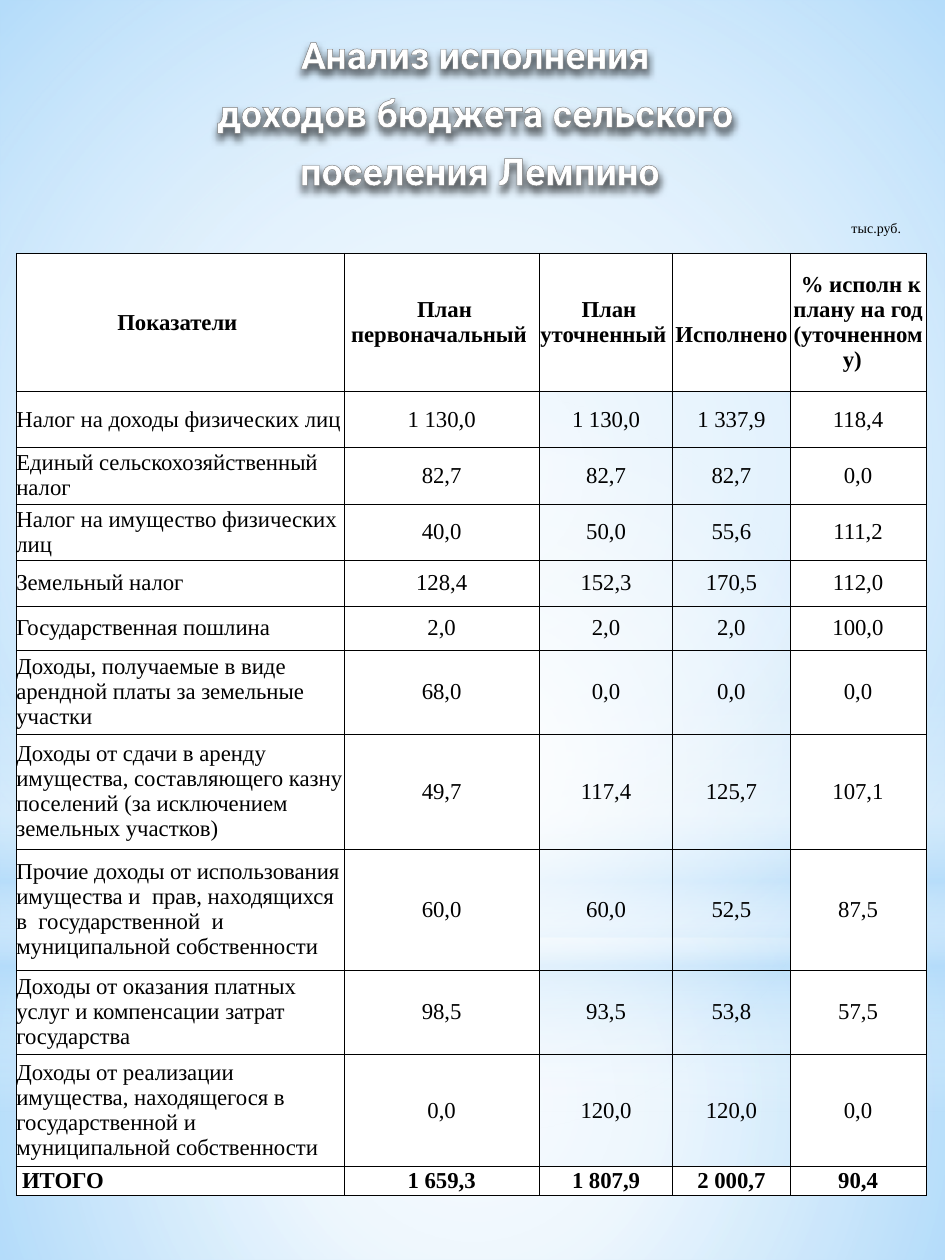
from lxml import etree
from pptx import Presentation
from pptx.dml.color import RGBColor
from pptx.enum.shapes import MSO_SHAPE as Shape
from pptx.enum.text import MSO_ANCHOR as Anchor, PP_ALIGN as Align
from pptx.oxml import parse_xml
from pptx.oxml.ns import nsdecls, qn
from pptx.util import Inches, Pt

COLORS = {"sky": "B4DCFA", "white": "FFFFFF", "black": "000000",
          "gray": "7F7F7F", "outline": "7D7D7D"}

BACKDROP = [
    (Shape.RECTANGLE, (0, 7.44, 7.5, 2.56), True,
     [(0, "white", 91), (37, "white", 76), (100, "sky", 79)]),
    (Shape.RECTANGLE, (0, 0, 7.5, 7.44), True,
     [(0, "white", 89), (48, "white", 62), (100, "sky", 79)]),
    (Shape.RECTANGLE, (0, 5.49, 7.5, 3.33), False,
     [(0, "white", 0), (29, "white", 30), (45, "sky", 40),
      (55, "white", 26), (65, "sky", 60), (100, "white", 0)]),
    (Shape.OVAL, (0, 2.33, 7.5, 7.44), True,
     [(0, "white", 100), (56, "white", 0)]),
]

TITLE = ["Анализ исполнения ", "доходов бюджета сельского ", "поселения Лемпино"]
TITLE_STOPS = [(0, "white", 100), (9, "white", 100), (50, "gray", 100),
               (79, "white", 100), (100, "white", 100)]
UNIT = "тыс.руб."

COLUMN_WIDTHS = [2.6, 1.55, 1.06, 0.93, 1.08]
ROW_HEIGHTS = [1.1, 0.44, 0.45, 0.45, 0.36, 0.35, 0.67, 0.91, 0.96, 0.67, 0.89, 0.23]
ROWS = [
    ("Показатели ", " План первоначальный ", " План уточненный ", " Исполнено ",
     " % исполн к плану на год (уточненному)  "),
    ("Налог на доходы физических лиц", "1 130,0", "1 130,0", "1 337,9", "118,4"),
    ("Единый сельскохозяйственный налог", "82,7", "82,7", "82,7", "0,0"),
    ("Налог на имущество физических лиц", "40,0", "50,0", "55,6", "111,2"),
    ("Земельный налог", "128,4", "152,3", "170,5", "112,0"),
    ("Государственная пошлина", "2,0", "2,0", "2,0", "100,0"),
    ("Доходы, получаемые в виде арендной платы за земельные участки",
     "68,0", "0,0", "0,0", "0,0"),
    ("Доходы от сдачи в аренду имущества, составляющего казну поселений "
     "(за исключением земельных участков)", "49,7", "117,4", "125,7", "107,1"),
    ("Прочие доходы от использования имущества и  прав, находящихся  "
     "в  государственной  и  муниципальной собственности",
     "60,0", "60,0", "52,5", "87,5"),
    ("Доходы от оказания платных услуг и компенсации затрат государства",
     "98,5", "93,5", "53,8", "57,5"),
    ("Доходы от реализации имущества, находящегося в государственной и "
     "муниципальной собственности", "0,0", "120,0", "120,0", "0,0"),
    (" ИТОГО", "1 659,3", "1 807,9", "2 000,7", "90,4"),
]
CLEAR_COLUMNS = (2, 3)


def rgb(name):
    return RGBColor.from_string(COLORS[name])


def gradient(stops, radial):
    stop_xml = "".join(
        f'<a:gs pos="{position * 1000}"><a:srgbClr val="{COLORS[color]}">'
        f'<a:alpha val="{opacity * 1000}"/></a:srgbClr></a:gs>'
        for position, color, opacity in stops)
    direction = ('<a:path path="circle"><a:fillToRect l="50000" t="50000" '
                 'r="50000" b="50000"/></a:path>' if radial
                 else '<a:lin ang="5400000" scaled="0"/>')
    return parse_xml(f'<a:gradFill {nsdecls("a")} rotWithShape="1">'
                     f'<a:gsLst>{stop_xml}</a:gsLst>{direction}</a:gradFill>')


def line(tag, color, points):
    return parse_xml(f'<a:{tag} {nsdecls("a")} w="{int(Pt(points))}"><a:solidFill>'
                     f'<a:srgbClr val="{COLORS[color]}"/></a:solidFill></a:{tag}>')


def add_backdrop(slide):
    slide.background.fill.solid()
    slide.background.fill.fore_color.rgb = rgb("sky")
    for kind, box, radial, stops in BACKDROP:
        shape = slide.shapes.add_shape(kind, *map(Inches, box))
        shape.shadow.inherit = False
        shape.line.fill.background()
        properties = shape._element.spPr
        properties.find(qn("a:prstGeom")).addnext(gradient(stops, radial))


def style_run(run, size, font, bold, color="black"):
    run.font.size = Pt(size)
    run.font.name = font
    run.font.bold = bold
    run.font.color.rgb = rgb(color)


def add_title(slide):
    box = slide.shapes.add_textbox(*map(Inches, (0.36, 0.2, 6.85, 1.42)))
    frame = box.text_frame
    frame.word_wrap = True
    frame.text = "\n".join(TITLE)
    for paragraph in frame.paragraphs:
        paragraph.alignment = Align.CENTER
        paragraph.space_before = Pt(4.3)
        paragraph.space_after = Pt(3)
        paragraph._p.get_or_add_pPr().set("marL", str(Inches(0.05)))
        run = paragraph.runs[0]
        style_run(run, 21.6, "Roboto", True, "white")
        properties = run._r.get_or_add_rPr()
        solid = properties.find(qn("a:solidFill"))
        properties.replace(solid, gradient(TITLE_STOPS, False))
        properties.insert(0, line("ln", "outline", 0.83))
    effects = etree.SubElement(box._element.spPr, qn("a:effectLst"))
    effects.append(parse_xml(
        f'<a:outerShdw {nsdecls("a")} blurRad="50800" dist="38100" dir="5400000">'
        f'<a:srgbClr val="{COLORS["black"]}"><a:alpha val="60000"/></a:srgbClr>'
        '</a:outerShdw>'))


def add_unit(slide):
    box = slide.shapes.add_textbox(*map(Inches, (6.66, 1.69, 0.76, 0.24)))
    box.text_frame.word_wrap = True
    box.text_frame.text = UNIT
    style_run(box.text_frame.paragraphs[0].runs[0], 8, "Times New Roman", False)


def fill_cell(cell, text, row, column):
    emphasized = row in (0, len(ROWS) - 1)
    cell.text_frame.text = text
    cell.vertical_anchor = Anchor.MIDDLE
    cell.margin_left = cell.margin_right = cell.margin_top = cell.margin_bottom = 0
    paragraph = cell.text_frame.paragraphs[0]
    paragraph.alignment = Align.CENTER if column or row == 0 else Align.LEFT
    style_run(paragraph.runs[0], 13, "Times New Roman", emphasized)
    if column in CLEAR_COLUMNS and not emphasized:
        cell.fill.background()
    else:
        cell.fill.solid()
        cell.fill.fore_color.rgb = rgb("white")
    properties = cell._tc.get_or_add_tcPr()
    for index, tag in enumerate(("lnL", "lnR", "lnT", "lnB")):
        properties.insert(index, line(tag, "black", 0.5))


def add_income_table(slide):
    table = slide.shapes.add_table(
        len(ROWS), len(COLUMN_WIDTHS), Inches(0.13), Inches(2.01),
        Inches(sum(COLUMN_WIDTHS)), Inches(sum(ROW_HEIGHTS))).table
    table.horz_banding = False
    for column, width in zip(table.columns, COLUMN_WIDTHS):
        column.width = Inches(width)
    for row, height in zip(table.rows, ROW_HEIGHTS):
        row.height = Inches(height)
    for row, texts in enumerate(ROWS):
        for column, text in enumerate(texts):
            fill_cell(table.cell(row, column), text, row, column)


def main():
    presentation = Presentation()
    presentation.slide_width = Inches(7.5)
    presentation.slide_height = Inches(10)
    slide = presentation.slides.add_slide(presentation.slide_layouts[6])
    add_backdrop(slide)
    add_title(slide)
    add_income_table(slide)
    add_unit(slide)
    presentation.save("out.pptx")


if __name__ == "__main__":
    main()
